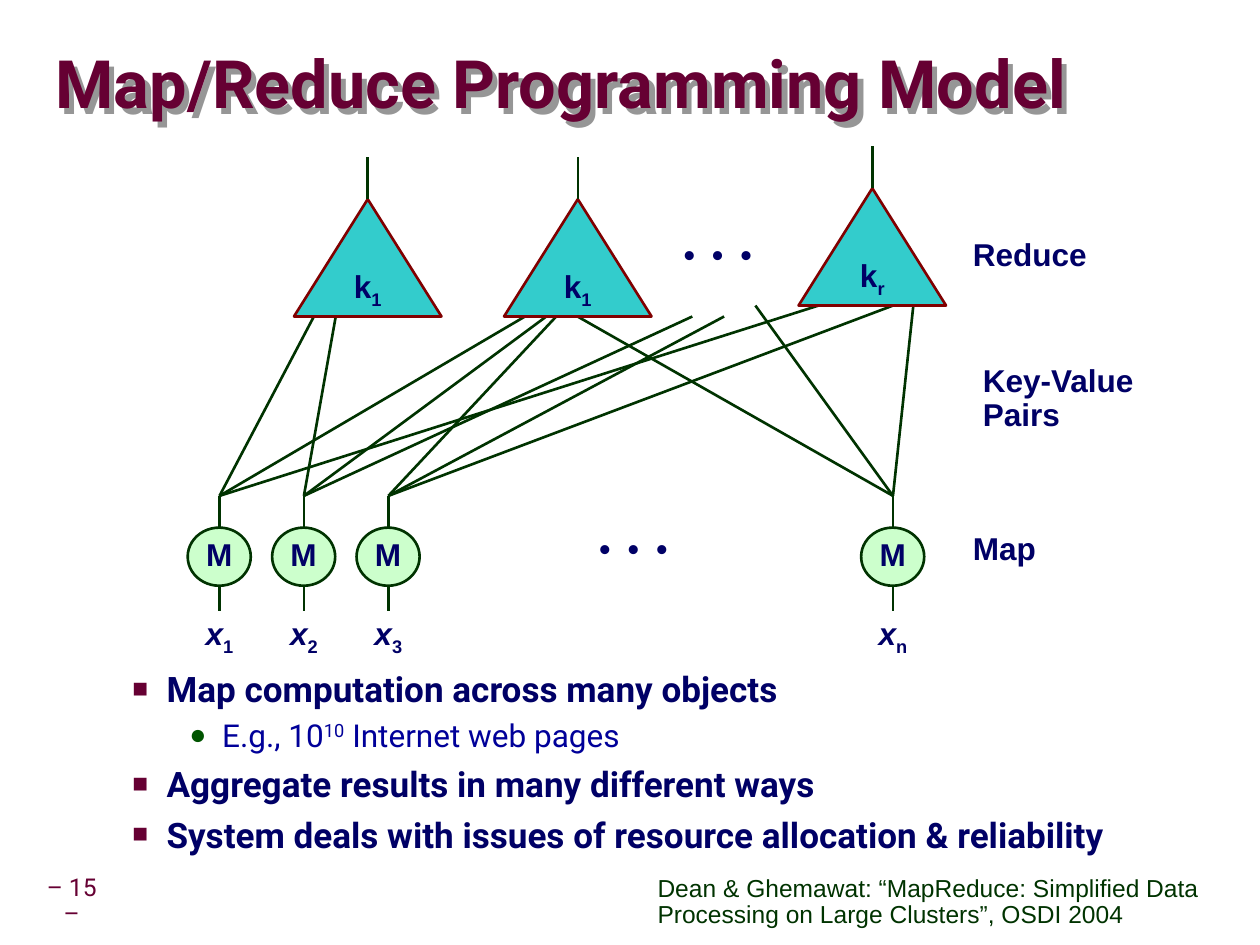
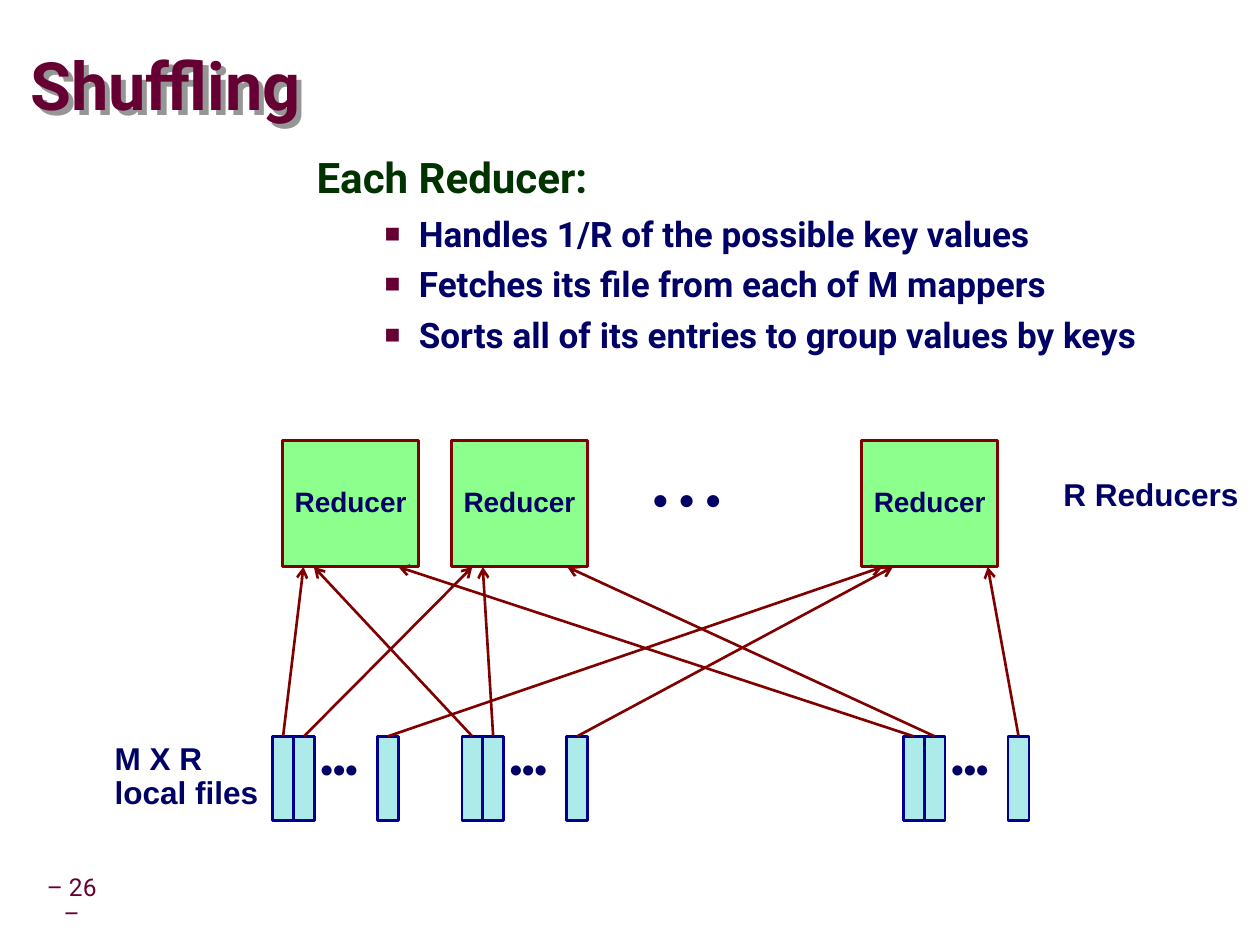
from dataclasses import dataclass, field

from lxml import etree
from pptx import Presentation
from pptx.dml.color import RGBColor
from pptx.enum import shapes, text
from pptx.oxml import ns, parse_xml
from pptx.util import Cm, Pt

DRAWING = 'xmlns:a="http://schemas.openxmlformats.org/drawingml/2006/main"'
LEFT, CENTER = text.PP_ALIGN.LEFT, text.PP_ALIGN.CENTER
TOP, MIDDLE = text.MSO_ANCHOR.TOP, text.MSO_ANCHOR.MIDDLE
SHAPE = shapes.MSO_SHAPE


@dataclass(frozen=True)
class Style:
    size: int
    color: str
    font: str = "Arial"
    bold: bool = True


@dataclass(frozen=True)
class Level:
    style: Style
    margin: float
    hanging: float
    before: int
    spacing: float = 1.0
    bullet: str = ""
    bullet_color: str = ""
    bullet_size: int = 100


@dataclass(frozen=True)
class Theme:
    title: Style = Style(38, "660033", "Roboto")
    number: Style = Style(14, "660033", "Roboto", False)
    label: Style = Style(18, "000066")
    box_label: Style = Style(16, "000066")
    file_dots: Style = Style(20, "000066")
    row_dots: Style = Style(24, "000066")
    citation: Style = Style(14, "003300", bold=False)
    levels: tuple = (
        Level(Style(24, "003300", "Roboto"), 1.07, 1.07, 50, 0.95),
        Level(Style(20, "000066", "Roboto"), 2.06, 0.69, 25, 1.0, "■", "660033", 75),
        Level(Style(18, "000099", "Roboto", False), 3.18, 0.66, 10, 1.07, "●", "005400", 90),
    )
    title_shadow: str = "969696"
    shadow_distance: float = 0.15
    edge: str = "003300"
    outline: str = "800000"
    mapper: str = "CCFFCC"
    triangle: str = "33CCCC"
    reducer: str = "8CFF8C"
    file: str = "ADEBEB"
    file_line: str = "000090"
    line_width: float = 1.5
    inset: float = 0.13


THEME = Theme()


@dataclass(frozen=True)
class Box:
    left: float
    top: float
    width: float
    height: float

    def inner(self, left, top, width, height):
        return Box(self.left + left, self.top + top, width, height)

    def point(self, x, y):
        return Cm(self.left + x), Cm(self.top + y)

    def lengths(self):
        return [Cm(value) for value in (self.left, self.top, self.width, self.height)]


@dataclass(frozen=True)
class Part:
    words: str
    attributes: dict = field(default_factory=dict)


def subscript(words):
    return Part(words, {"baseline": "-25000"})


def add_part(paragraph, part, style):
    run = paragraph.add_run()
    run.text = part.words
    run.font.size = Pt(style.size)
    run.font.bold = style.bold
    run.font.name = style.font
    run.font.color.rgb = RGBColor.from_string(style.color)
    for name, value in part.attributes.items():
        run._r.get_or_add_rPr().set(name, value)


def write(shape, lines, style, align=CENTER, anchor=MIDDLE, wrap=False, inset=THEME.inset):
    frame = shape.text_frame
    frame.word_wrap = wrap
    frame.vertical_anchor = anchor
    frame.margin_left = frame.margin_right = Cm(inset)
    frame.margin_top = frame.margin_bottom = Cm(THEME.inset)
    for index, line in enumerate(lines):
        paragraph = frame.add_paragraph() if index else frame.paragraphs[0]
        paragraph.alignment = align
        paragraph.line_spacing = 0.9
        for part in line:
            add_part(paragraph, part, style)


def add_label(slide, box, lines, style=THEME.label, align=LEFT, **options):
    shape = slide.shapes.add_textbox(*box.lengths())
    write(shape, lines, style, align, **{"anchor": TOP, **options})
    shape.text_frame.auto_size = text.MSO_AUTO_SIZE.SHAPE_TO_FIT_TEXT


def add_figure(slide, kind, box, fill, line):
    shape = slide.shapes.add_shape(kind, *box.lengths())
    shape.shadow.inherit = False
    shape.fill.solid()
    shape.fill.fore_color.rgb = RGBColor.from_string(fill)
    shape.line.color.rgb = RGBColor.from_string(line)
    shape.line.width = Pt(THEME.line_width)
    return shape


def add_line(slide, start, end, color, arrow=False):
    connector = slide.shapes.add_connector(shapes.MSO_CONNECTOR.STRAIGHT, *start, *end)
    connector.line.color.rgb = RGBColor.from_string(color)
    connector.line.width = Pt(THEME.line_width)
    if arrow:
        etree.SubElement(connector.line._get_or_add_ln(), ns.qn("a:tailEnd"), type="arrow")
    etree.SubElement(connector._element.spPr, ns.qn("a:effectLst"))
    return connector


def place(shape, box):
    shape.left, shape.top, shape.width, shape.height = box.lengths()
    shape.text_frame.auto_size = text.MSO_AUTO_SIZE.NONE
    shape.text_frame.word_wrap = True


def fill_title(slide, box, words, spacing):
    title = slide.shapes.title
    place(title, box)
    title.fill.background()
    title._element.spPr.append(parse_xml(
        f'<a:effectLst {DRAWING}>'
        f'<a:outerShdw dist="{Cm(THEME.shadow_distance)}" dir="2700000" algn="ctr" rotWithShape="0">'
        f'<a:srgbClr val="{THEME.title_shadow}"/></a:outerShdw></a:effectLst>'))
    frame = title.text_frame
    frame.vertical_anchor = MIDDLE
    frame.margin_left = frame.margin_right = frame.margin_top = frame.margin_bottom = 0
    paragraph = frame.paragraphs[0]
    paragraph.alignment = LEFT
    paragraph.line_spacing = spacing
    add_part(paragraph, Part(words), THEME.title)


def format_level(paragraph, number):
    level = THEME.levels[number]
    paragraph.level = number
    paragraph.alignment = LEFT
    paragraph.line_spacing = level.spacing
    properties = paragraph._p.get_or_add_pPr()
    properties.set("marL", str(Cm(level.margin)))
    properties.set("indent", str(-Cm(level.hanging)))
    items = [f'<a:spcBef {DRAWING}><a:spcPct val="{level.before * 1000}"/></a:spcBef>']
    if level.bullet:
        items += [
            f'<a:buClr {DRAWING}><a:srgbClr val="{level.bullet_color}"/></a:buClr>',
            f'<a:buSzPct {DRAWING} val="{level.bullet_size * 1000}"/>',
            f'<a:buFont {DRAWING} typeface="Arial"/>',
            f'<a:buChar {DRAWING} char="{level.bullet}"/>',
        ]
    else:
        items.append(f'<a:buNone {DRAWING}/>')
    for item in items:
        properties.append(parse_xml(item))
    return level.style


def fill_body(slide, box, lines):
    body = slide.placeholders[1]
    place(body, box)
    frame = body.text_frame
    frame.vertical_anchor = TOP
    for index, (number, *parts) in enumerate(lines):
        paragraph = frame.add_paragraph() if index else frame.paragraphs[0]
        style = format_level(paragraph, number)
        for part in parts:
            add_part(paragraph, part, style)


def start_slide(presentation, number, title, title_box, spacing, body_box, lines):
    slide = presentation.slides.add_slide(presentation.slide_layouts[1])
    fill_title(slide, title_box, title, spacing)
    fill_body(slide, body_box, lines)
    add_label(slide, Box(0.76, 17.55, 1.37, 1.19), [[Part(f"– {number} –")]],
              THEME.number, CENTER, anchor=MIDDLE, wrap=True)
    return slide


def draw_map_reduce(slide, box):
    low_base, high_base = 3.42, 3.2
    mapper_top = 7.03
    mappers = {
        "1": (0.64, [(2.54, low_base), (6.79, low_base), (12.7, high_base)]),
        "2": (2.34, [(2.98, low_base), (7.22, low_base), (10.16, low_base)]),
        "3": (4.04, [(7.42, low_base), (10.8, low_base), (14.2, high_base)]),
        "n": (14.2, [(14.61, high_base), (11.43, high_base), (7.85, low_base)]),
    }
    for index, (center, targets) in mappers.items():
        add_line(slide, box.point(center, 9.34), box.point(center, mapper_top), THEME.edge)
        circle = add_figure(slide, SHAPE.OVAL, box.inner(center - 0.64, 7.67, 1.27, 1.17),
                            THEME.mapper, THEME.edge)
        write(circle, [[Part("M")]], THEME.label)
        add_label(slide, box.inner(center - 0.6, 9.29, 1.2, 0.94),
                  [[Part("x", {"i": "1"}), subscript(index)]], align=CENTER)
        for target in targets:
            add_line(slide, box.point(center, mapper_top), box.point(*target), THEME.edge)

    for index, left, base in (("1", 2.14, low_base), ("1", 6.37, low_base), ("r", 12.3, high_base)):
        width, height, stem = 2.97, 2.36, 0.85
        apex, middle = base - height, left + width / 2
        triangle = add_figure(slide, SHAPE.ISOSCELES_TRIANGLE,
                              box.inner(left, apex, width, height), THEME.triangle, THEME.outline)
        write(triangle, [[Part("k"), subscript(index)]], THEME.label)
        output = add_line(slide, box.point(middle, apex), box.point(middle, apex - stem), THEME.edge)
        output.begin_connect(triangle, 0)

    for left, top in ((9.76, 1.74), (8.06, 7.65)):
        add_label(slide, box.inner(left, top, 1.83, 0.94),
                  [[Part("• • •", {"spc": "250"})]], align=CENTER)
    for left, top, lines in ((15.68, 1.74, ["Reduce"]),
                             (15.88, 4.28, ["Key-Value", "Pairs"]),
                             (15.68, 7.65, ["Map"])):
        add_label(slide, box.inner(left, top, 4, 0.94 * len(lines)),
                  [[Part(line)] for line in lines], wrap=True)


def draw_shuffle(slide, box):
    reducer_lefts = (3.63, 7.03, 15.29)
    group_lefts = (3.43, 7.24, 16.13)
    file_offsets = (0, 0.42, 2.11)
    landings = ((0.42, 0.42, 0.42), (0.63, 0.63, 0.63), (2.33, 2.33, 2.54))
    reducer_height, file_top, inset = 2.54, 5.95, 0.25

    for left in reducer_lefts:
        reducer = add_figure(slide, SHAPE.RECTANGLE, box.inner(left, 0, 2.74, reducer_height),
                             THEME.reducer, THEME.outline)
        write(reducer, [[Part("Reducer")]], THEME.box_label)

    for group_left, group_landings in zip(group_lefts, landings):
        for offset, reducer_left, landing in zip(file_offsets, reducer_lefts, group_landings):
            file_box = box.inner(group_left + offset, file_top, 0.42, 1.7)
            local_file = add_figure(slide, SHAPE.RECTANGLE, file_box, THEME.file, THEME.file_line)
            arrow = add_line(slide, file_box.point(0.21, 0),
                             box.point(reducer_left + landing, reducer_height),
                             THEME.outline, arrow=True)
            arrow.begin_connect(local_file, 0)
        add_label(slide, box.inner(group_left + 0.07, 6.15, 2.54, 1.04), [[Part("•••")]],
                  THEME.file_dots, CENTER, wrap=True, inset=inset)

    add_label(slide, box.inner(0, file_top, 3.43, 1.65),
              [[Part("M X R")], [Part("local files")]], inset=inset)
    add_label(slide, box.inner(10.84, 0.64, 3.4, 1.19), [[Part("• • •")]],
              THEME.row_dots, inset=inset)
    add_label(slide, box.inner(19.1, 0.64, 4.06, 0.97), [[Part("R Reducers")]], inset=inset)


def build_model_slide(presentation):
    slide = start_slide(
        presentation, 15, "Map/Reduce Programming Model", Box(1.12, 0.69, 24.18, 2.16), 0.87,
        Box(1.04, 13.31, 23.04, 4.2),
        [(1, Part("Map computation across many objects")),
         (2, Part("E.g., 10"), Part("10", {"baseline": "30000"}), Part(" Internet web pages")),
         (1, Part("Aggregate results in many different ways")),
         (1, Part("System deals with issues of resource allocation & reliability"))])
    draw_map_reduce(slide, Box(3.78, 2.95, 19.2, 10.23))
    add_label(slide, Box(13.11, 17.5, 11.38, 1.32),
              [[Part("Dean & Ghemawat: “MapReduce: Simplified Data Processing "
                     "on Large Clusters”, OSDI 2004")]], THEME.citation, wrap=True)


def build_shuffling_slide(presentation):
    slide = start_slide(
        presentation, 26, "Shuffling", Box(0.61, 0.61, 24.18, 2.16), 1.0,
        Box(6.12, 3.0, 18.21, 6.71),
        [(0, Part("Each Reducer:")),
         (1, Part("Handles 1/R of the possible key values")),
         (1, Part("Fetches its file from each of M mappers")),
         (1, Part("Sorts all of its entries to group values by keys"))])
    draw_shuffle(slide, Box(2.06, 8.87, 23.16, 7.65))


def main():
    presentation = Presentation()
    presentation.slide_width, presentation.slide_height = Cm(25.37), Cm(19.02)
    build_model_slide(presentation)
    build_shuffling_slide(presentation)
    presentation.save("out.pptx")


if __name__ == "__main__":
    main()
